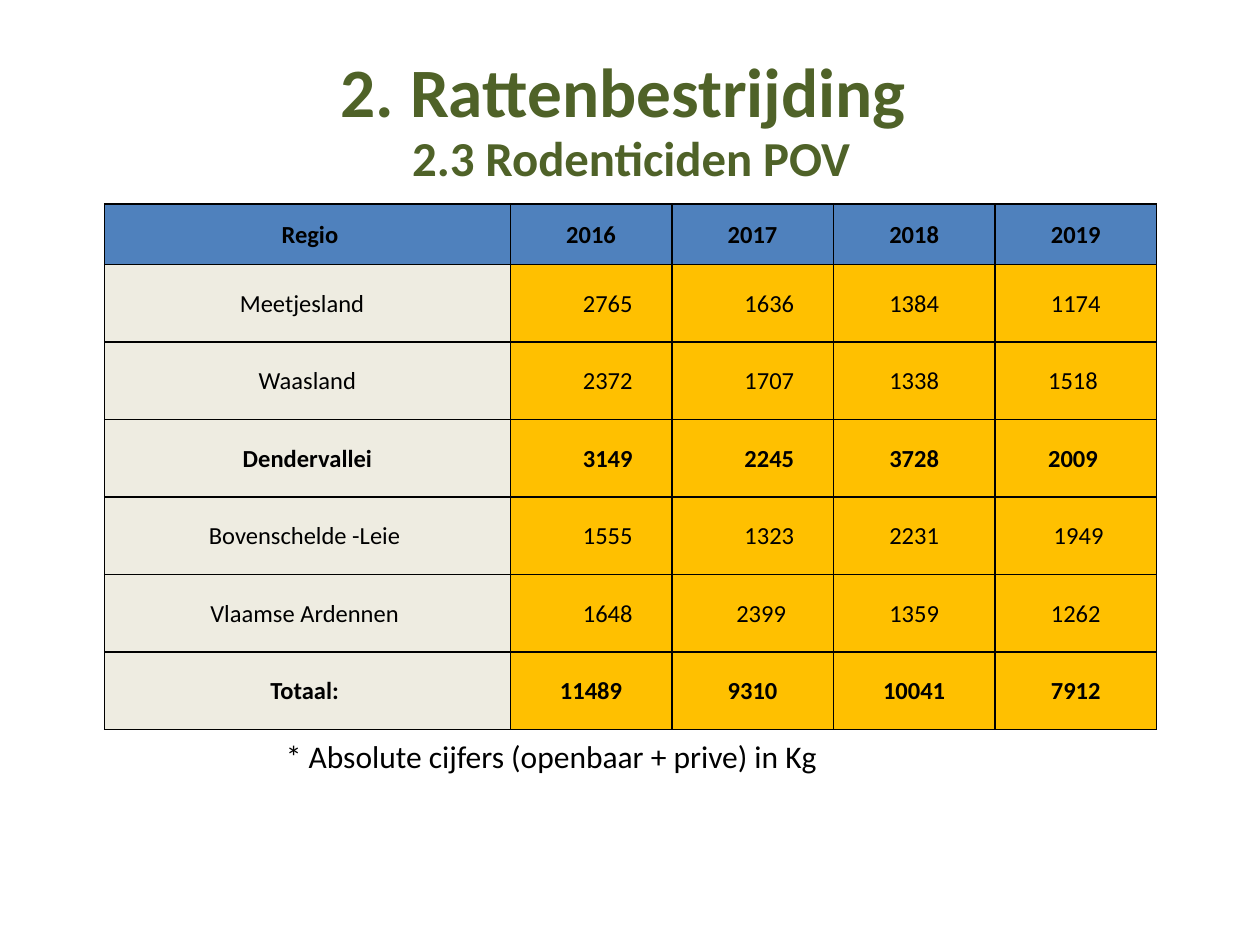
"""Build the slide on rodenticide use per region."""
from dataclasses import dataclass

from pptx import Presentation
from pptx.dml.color import RGBColor as Rgb
from pptx.enum.text import MSO_ANCHOR as Anchor, PP_ALIGN as Align
from pptx.oxml import parse_xml
from pptx.oxml.ns import nsdecls
from pptx.util import Inches, Pt


@dataclass(frozen=True)
class Theme:
    font: str = "Calibri"
    title: str = "4F6228"
    ink: str = "000000"
    header: str = "4F81BD"
    region: str = "EEECE1"
    value: str = "FFC000"
    title_size: float = 39.6
    subtitle_size: float = 27.9
    note_size: float = 18
    table_size: float = 14


@dataclass(frozen=True)
class Row:
    texts: tuple[str, ...]
    indents: tuple[float, ...] = (0, 0, 0, 0, 0)
    bold: bool = False


THEME = Theme()
WIDE, MIDDLE, NARROW = 0.31, 0.18, 0.09
ROWS = (
    Row(("Regio", "2016", "2017", "2018", "2019"), (0.04, 0, 0, 0, 0), True),
    Row(("Meetjesland ", "2765 ", "1636 ", "1384", "1174"), (-0.04, WIDE, WIDE, 0, 0)),
    Row(("Waasland", "2372 ", "1707 ", "1338", "1518 "), (0, WIDE, WIDE, 0, 0)),
    Row(("Dendervallei", "3149 ", "2245 ", "3728", "2009 "), (0, WIDE, WIDE, 0, 0), True),
    Row(("Bovenschelde -Leie ", "1555 ", "1323 ", "2231", "1949 "), (0, WIDE, WIDE, 0, NARROW)),
    Row(("Vlaamse Ardennen ", "1648 ", "2399 ", "1359", "1262"), (0, WIDE, MIDDLE, 0, 0)),
    Row(("Totaal: ", "11489", "9310", "10041", "7912"), bold=True),
)


def add_span(para, text: str, size: float, color: str, bold: bool = False) -> None:
    """Add one formatted run to a paragraph."""
    span = para.add_run()
    span.text = text
    for name, value in {"name": THEME.font, "size": Pt(size), "bold": bold}.items():
        setattr(span.font, name, value)
    span.font.color.rgb = Rgb.from_string(color)


def add_box(slide, left: float, top: float, width: float, height: float, **formats):
    """Add a wrapping text box and return its first paragraph."""
    box = slide.shapes.add_textbox(*map(Inches, (left, top, width, height)))
    for name, value in {"word_wrap": True, **formats}.items():
        setattr(box.text_frame, name, value)
    return box.text_frame.paragraphs[0]


def add_borders(cell) -> None:
    """Draw a thin line on all four sides of a cell."""
    properties = cell._tc.get_or_add_tcPr()
    for side in ("lnL", "lnR", "lnT", "lnB"):
        properties.append(parse_xml(
            f'<a:{side} {nsdecls("a")} w="{Pt(1)}"><a:solidFill>'
            f'<a:srgbClr val="{THEME.ink}"/></a:solidFill></a:{side}>'))


def fill_cell(cell, text: str, indent: float, bold: bool, color: str) -> None:
    """Style one cell and shift its centred text by the indent."""
    formats = {
        "vertical_anchor": Anchor.MIDDLE,
        "margin_left": Inches(0.01 + max(indent, 0)),
        "margin_right": Inches(0.01 + max(-indent, 0)),
        "margin_top": Inches(0.01),
        "margin_bottom": 0,
    }
    for name, value in formats.items():
        setattr(cell, name, value)
    add_borders(cell)
    cell.fill.solid()
    cell.fill.fore_color.rgb = Rgb.from_string(color)
    para = cell.text_frame.paragraphs[0]
    para.alignment = Align.CENTER
    add_span(para, text, THEME.table_size, THEME.ink, bold)


def add_region_table(slide, rows: tuple[Row, ...]) -> None:
    """Add the table of yearly amounts per region."""
    width, height, region_width, header_height = map(Inches, (8.35, 4.17, 3.22, 0.48))
    count = len(rows[0].texts)
    table = slide.shapes.add_table(
        len(rows), count, Inches(0.83), Inches(1.62), width, height).table
    for index, column in enumerate(table.columns):
        column.width = (width - region_width) // (count - 1) if index else region_width
    for index, (line, row) in enumerate(zip(table.rows, rows)):
        line.height = (height - header_height) // (len(rows) - 1) if index else header_height
        for place, (text, indent) in enumerate(zip(row.texts, row.indents)):
            body = THEME.value if place else THEME.region
            color = body if index else THEME.header
            fill_cell(table.cell(index, place), text, indent, row.bold, color)


def main() -> None:
    """Create the deck and save it."""
    deck = Presentation()
    deck.slide_width, deck.slide_height = Inches(10), Inches(7.5)
    slide = deck.slides.add_slide(deck.slide_layouts[6])

    title = add_box(slide, 0.51, 0.29, 9, 1.25,
                    vertical_anchor=Anchor.MIDDLE, margin_top=Inches(0.15))
    title.alignment, title.line_spacing = Align.CENTER, 0.93
    add_span(title, "2. Rattenbestrijding ", THEME.title_size, THEME.title, True)
    title.add_line_break()
    add_span(title, "2.3 Rodenticiden POV", THEME.subtitle_size, THEME.title, True)

    note = add_box(slide, 2.17, 5.8, 5.28, 0.4)
    add_span(note, "* Absolute cijfers (openbaar + prive) in Kg", THEME.note_size, THEME.ink)
    add_region_table(slide, ROWS)
    deck.save("out.pptx")


if __name__ == "__main__":
    main()
